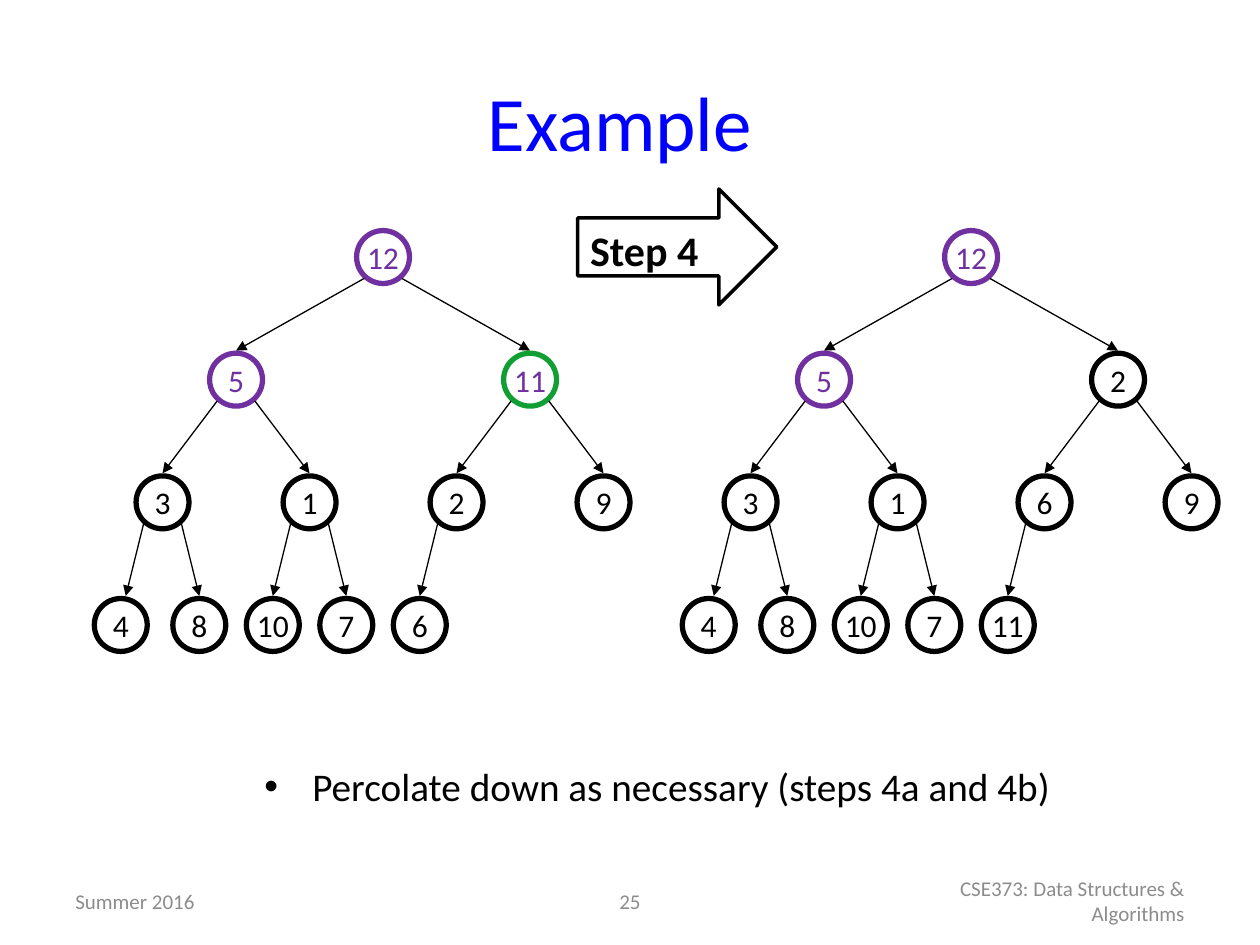
from lxml import etree
from pptx import Presentation
from pptx.dml.color import RGBColor
from pptx.enum.shapes import MSO_CONNECTOR, MSO_SHAPE
from pptx.enum.text import MSO_ANCHOR, PP_ALIGN
from pptx.oxml.ns import qn
from pptx.util import Inches, Pt

LEFT, MID, RIGHT = PP_ALIGN.LEFT, PP_ALIGN.CENTER, PP_ALIGN.RIGHT
TOP, CENTER = MSO_ANCHOR.TOP, MSO_ANCHOR.MIDDLE
OVAL, ARROW = MSO_SHAPE.OVAL, MSO_SHAPE.RIGHT_ARROW
STRAIGHT = MSO_CONNECTOR.STRAIGHT

BLACK, WHITE, BLUE, GRAY = "000000", "FFFFFF", "0000FF", "8C8C8C"
PURPLE, GREEN = "7030A0", "119F33"

TEXTS = [
    ("Example", (0.67, 0.33, 8.5, 1.25), 44, BLUE, MID, CENTER),
    ("Summer 2016", (0.5, 6.95, 2.33, 0.4), 12, GRAY, LEFT, CENTER),
    ("25", (3.42, 6.95, 3.16, 0.4), 12, GRAY, MID, CENTER),
    ("CSE373: Data Structures & Algorithms", (7.17, 6.95, 2.33, 0.4), 12, GRAY, RIGHT, CENTER),
]
POINT = ("Percolate down as necessary (steps 4a and 4b)", (2, 6, 6.92, 0.75), 22.4, BLACK, LEFT, TOP)
STEP = ("Step 4", (4.585, 1.5, 1.58, 0.92), 24)

SPAN, FIRST, STEEP, SIZE = 14 / 3, 1.83, 2.92 / 3, 0.42
ROOT = 3.04
TREES = [
    (ROOT, [12, 5, 11, 3, 1, 2, 9, 4, 8, 10, 7, 6],
     {0: (PURPLE, PURPLE), 1: (PURPLE, PURPLE), 2: (GREEN, PURPLE)}),
    (ROOT + SPAN, [12, 5, 2, 3, 1, 6, 9, 4, 8, 10, 7, 11],
     {0: (PURPLE, PURPLE), 1: (PURPLE, PURPLE)}),
]
NUDGE = {7: -0.04}


def color(code):
    return RGBColor.from_string(code)


def write(shape, text, size, hue, align, anchor, wrap=True):
    frame = shape.text_frame
    frame.word_wrap = wrap
    frame.vertical_anchor = anchor
    para = frame.paragraphs[0]
    para.text = text
    para.alignment = align
    para.font.name = "Calibri"
    para.font.size = Pt(size)
    para.font.color.rgb = color(hue)
    return para


def label(text, box, *style):
    shape = slide.shapes.add_textbox(*map(Inches, box))
    return write(shape, text, *style)


def outline(kind, box, hue, width, solid):
    shape = slide.shapes.add_shape(kind, *map(Inches, box))
    shape.shadow.inherit = False
    if solid:
        shape.fill.solid()
        shape.fill.fore_color.rgb = color(WHITE)
    else:
        shape.fill.background()
    shape.line.color.rgb = color(hue)
    shape.line.width = Pt(width)
    return shape


def link(*ends):
    line = slide.shapes.add_connector(STRAIGHT, *map(Inches, ends))
    line.line.color.rgb = color(BLACK)
    line.line.width = Pt(0.75)
    props = line._element.spPr
    etree.SubElement(props.find(qn("a:ln")), qn("a:tailEnd"), type="triangle")
    etree.SubElement(props, qn("a:effectLst"))


def place(root, index):
    level = (index + 1).bit_length() - 1
    count = 2 ** level
    slot = index + 1 - count
    return root + ((slot + 0.5) / count - 0.5) * SPAN, FIRST + level * STEEP


def tree(root, values, marks):
    for index, value in enumerate(values):
        x, y = place(root, index)
        if index:
            up_x, up_y = place(root, (index - 1) // 2)
            side = -0.15 if index % 2 else 0.15
            link(up_x + side, up_y + 0.38, x, y - 0.02)
        ring, ink = marks.get(index, (BLACK, BLACK))
        left = x - SIZE / 2 + NUDGE.get(index, 0)
        last = index == len(values) - 1
        node = outline(OVAL, (left, y, SIZE, SIZE), ring, 3, last)
        write(node, str(value), 18, ink, MID, CENTER, False)


deck = Presentation()
deck.slide_width, deck.slide_height = Inches(10), Inches(7.5)
slide = deck.slides.add_slide(deck.slide_layouts[6])

for item in TEXTS:
    label(*item)

text, box, size = STEP
arrow = outline(ARROW, box, BLACK, 2, True)
write(arrow, text, size, BLACK, LEFT, TOP).font.bold = True

props = label(*POINT)._p.get_or_add_pPr()
props.set("marL", str(Inches(0.38)))
props.set("indent", str(-Inches(0.38)))
props.insert(0, etree.Element(qn("a:buFont"), typeface="Arial"))
props.insert(1, etree.Element(qn("a:buChar"), char="•"))

for item in TREES:
    tree(*item)

deck.save("out.pptx")
